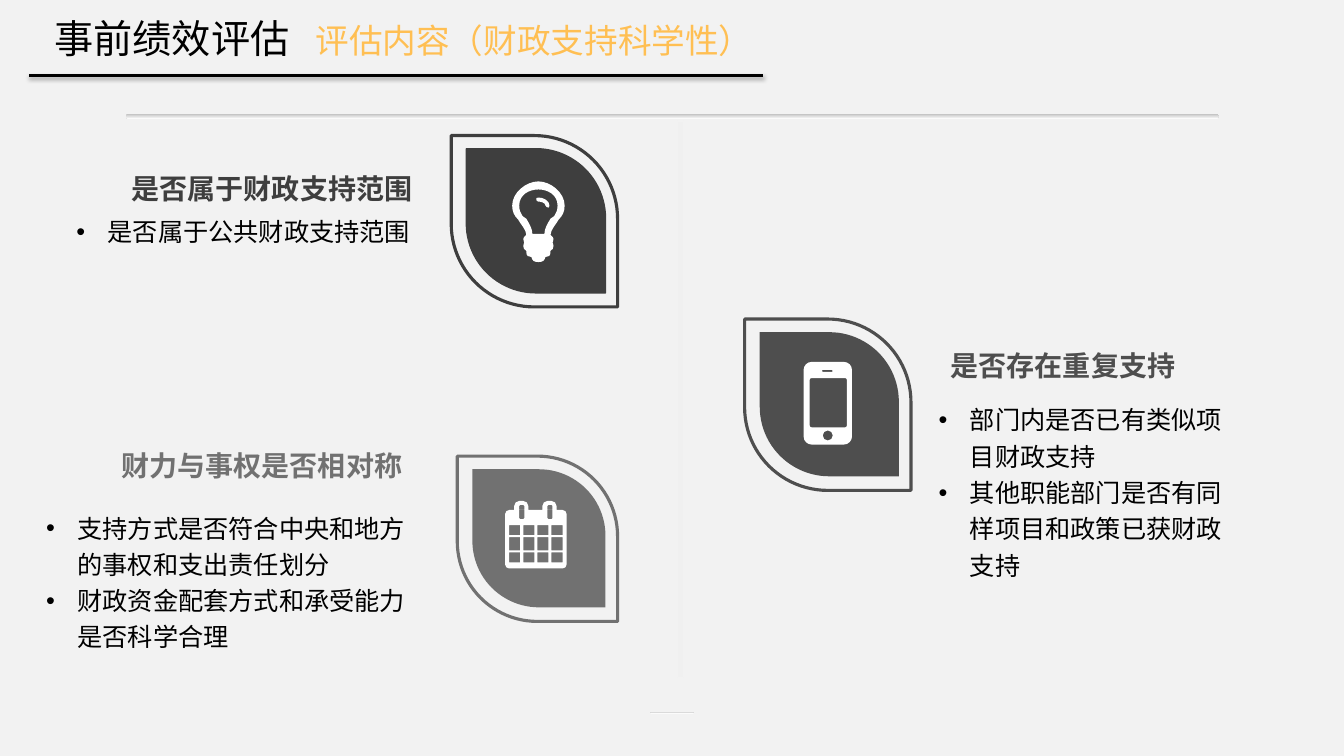
"""Build the slide on judging fiscal support before spending."""
from lxml import etree
from pptx import Presentation
from pptx.dml.color import RGBColor
from pptx.enum.shapes import MSO_CONNECTOR, MSO_SHAPE
from pptx.enum.text import MSO_ANCHOR, PP_ALIGN
from pptx.oxml import parse_xml
from pptx.oxml.ns import qn
from pptx.util import Emu, Pt

PX = 9144
NS = "http://schemas.openxmlformats.org/drawingml/2006/main"
LEAF, PILL, RECT = MSO_SHAPE.ROUND_2_DIAG_RECTANGLE, MSO_SHAPE.ROUNDED_RECTANGLE, MSO_SHAPE.RECTANGLE
TOP, MIDDLE, BOTTOM = MSO_ANCHOR.TOP, MSO_ANCHOR.MIDDLE, MSO_ANCHOR.BOTTOM
LEFT, RIGHT = PP_ALIGN.LEFT, PP_ALIGN.RIGHT
BLACK, WHITE, PAPER, AMBER = "000000", "FFFFFF", "F2F2F2", "FFBF53"
BODY_FONT, TITLE_FONT = "Calibri", "Noto Sans CJK SC"

TITLE = [("事前绩效评估\t", 28, BLACK), ("评估内容（财政支持科学性）", 24, AMBER)]
TITLE_BOX, TITLE_TAB = (54, 14, 740, 60), 259
RULES = [(125, 113, 1084, 5), (645, 706, 43, 2)]
DIVIDER = (672, 120, 6, 552)
UNDERLINE = (29, 75, 757, 75)
LEAF_INSET, LEAF_SHRINK = (15, 13), 27

TOPICS = [
    {"color": "3E3E3E", "inner_line": "3E3E3E", "leaf": (445, 137, 170, 165), "icon": "bulb",
     "heading": "是否属于财政支持范围", "heading_box": (118, 158, 330, 45),
     "heading_style": (BOTTOM, RIGHT, (0, 0, 39, 0)),
     "points": ["是否属于公共财政支持范围"], "points_box": (66, 204, 382, 76),
     "points_style": (TOP, LEFT, (10, 5, 39, 5))},
    {"color": "4E4E4E", "inner_line": None, "leaf": (736, 319, 170, 165), "icon": "phone",
     "heading": "是否存在重复支持", "heading_box": (904, 340, 300, 45),
     "heading_style": (MIDDLE, LEFT, (39, 0, 24, 0)),
     "points": ["部门内是否已有类似项目财政支持", "其他职能部门是否有同样项目和政策已获财政支持"],
     "points_box": (892, 381, 357, 209),
     "points_style": (MIDDLE, LEFT, (39, 5, 24, 5))},
    {"color": "717171", "inner_line": None, "leaf": (451, 455, 164, 159), "icon": "calendar",
     "heading": "财力与事权是否相对称", "heading_box": (108, 433, 330, 45),
     "heading_style": (BOTTOM, RIGHT, (0, 0, 39, 0)),
     "points": ["支持方式是否符合中央和地方的事权和支出责任划分", "财政资金配套方式和承受能力是否科学合理"],
     "points_box": (36, 498, 412, 76),
     "points_style": (TOP, LEFT, (10, 5, 39, 5))},
]

BULB_AXIS = 534
BULB_HALVES = [
    [(534, 180), (546, 180), (560, 191), (560, 204), (560, 210), (558, 214), (554, 218),
     (552, 222), (546, 228), (546, 233), (548, 235), (549, 236), (549, 237),
     (549, 239), (548, 240), (548, 241), (548, 241), (549, 242), (549, 244),
     (549, 246), (548, 248), (546, 249), (546, 249), (546, 250), (546, 250),
     (546, 254), (544, 255), (541, 255), (540, 259), (538, 260), (534, 260)],
    [(534, 188), (543, 188), (553, 193), (553, 204), (553, 208), (552, 211), (550, 214),
     (550, 215), (548, 215), (546, 217), (543, 222), (540, 227), (540, 232),
     (540, 232), (534, 232), (534, 232)],
]
BULB_GLINT = [(544, 206), (543, 206), (541, 205), (541, 204), (541, 201), (536, 200), (534, 200),
              (532, 200), (532, 199), (532, 197), (532, 197), (532, 196), (534, 196),
              (539, 196), (545, 199), (545, 204), (545, 205), (544, 206), (544, 206)]
PHONE_PARTS = [(797, 359, 845, 441, 8, 8), (803, 375, 840, 424, 2, 2),
               (815, 367, 826, 369, 1, 1), (816, 427, 826, 437, 5, 5)]
CALENDAR_PARTS = [(501, 506, 562, 564, 4, 4)]
CALENDAR_PARTS += [(x, 497, x + 14, 506, 5, 0) for x in (510, 538)]
CALENDAR_PARTS += [(x, 501, x + 5, 515, 1, 1) for x in (515, 543)]
CALENDAR_PARTS += [(505 + 14 * column, top, 516 + 14 * column, bottom, 0, 0)
                   for top, bottom in ((521, 531), (533, 546), (548, 558)) for column in range(4)]


def px(*values):
    return [Emu(round(value * PX)) for value in values]


def rgb(value):
    return RGBColor.from_string(value)


def rounded(left, top, right, bottom, top_radius, bottom_radius):
    """Outline a rectangle as a start point and cubic curve triples."""
    outline = []
    corners = [(left, top, 1, 1, top_radius), (right, top, -1, 1, top_radius),
               (right, bottom, -1, -1, bottom_radius), (left, bottom, 1, -1, bottom_radius)]
    for x, y, dx, dy, radius in corners:
        pull = 0.45 * radius
        arc = [(x, y + dy * radius), (x, y + dy * pull), (x + dx * pull, y), (x + dx * radius, y)]
        if dx != dy:
            arc.reverse()
        if not radius:
            arc = [(x, y)]
        edge = [outline[-1], arc[0]] if outline else []
        outline += edge + arc
    return outline


def mirrored(half):
    return half + [(2 * BULB_AXIS - x, y) for x, y in reversed(half[:-1])]


def add_shape(page, kind, box, fill=None, line=None, width=1):
    shape = page.shapes.add_shape(kind, *px(*box))
    shape.shadow.inherit = False
    if fill:
        shape.fill.solid()
        shape.fill.fore_color.rgb = rgb(fill)
    else:
        shape.fill.background()
    if line:
        shape.line.color.rgb = rgb(line)
        shape.line.width = Pt(width)
    else:
        shape.line.fill.background()
    return shape


def add_rule(page, box):
    rule = add_shape(page, PILL, box)
    rule.adjustments[0] = 0.5
    rule.fill.gradient()
    rule.fill.gradient_angle = 270
    for stop, color, position in zip(rule.fill.gradient_stops, ("BFBFBF", WHITE), (0, 1)):
        stop.color.rgb = rgb(color)
        stop.position = position


def add_leaf(page, box, **look):
    leaf = add_shape(page, LEAF, box, **look)
    leaf.rotation = 270
    leaf.adjustments[0], leaf.adjustments[1] = 0.5, 0


def add_icon(page, outlines):
    """Draw closed outlines as one shape, each three points after the start making a curve."""
    builder = None
    for outline in outlines:
        start, *rest = [px(*point) for point in outline]
        if builder is None:
            builder = page.shapes.build_freeform(*start, scale=1.0)
        else:
            builder.move_to(*start)
        builder.add_line_segments(rest, close=True)
    icon = builder.convert_to_shape()
    steps = list(icon._element.iter(qn("a:lnTo")))
    for first, second, third in zip(steps[::3], steps[1::3], steps[2::3]):
        curve = etree.Element(qn("a:cubicBezTo"))
        first.addprevious(curve)
        for step in (first, second, third):
            curve.append(step[0])
            step.getparent().remove(step)
    icon.shadow.inherit = False
    icon.fill.solid()
    icon.fill.fore_color.rgb = rgb(WHITE)
    icon.line.fill.background()


def style(span, size, color, font=BODY_FONT, bold=False):
    span.font.size, span.font.bold, span.font.name = Pt(size), bold, font
    span.font.color.rgb = rgb(color)
    etree.SubElement(span.font._element, qn("a:ea")).set("typeface", font)


def add_text(page, box, lines, anchor, align, insets, size, color, bullets=False):
    frame = page.shapes.add_textbox(*px(*box)).text_frame
    frame.word_wrap = True
    frame.vertical_anchor = anchor
    frame.margin_left, frame.margin_top, frame.margin_right, frame.margin_bottom = px(*insets)
    frame.text = "\n".join(lines)
    for para in frame.paragraphs:
        para.alignment = align
        style(para.runs[0], size, color, bold=not bullets)
        if bullets:
            para.line_spacing = 1.2
            props = para._p.get_or_add_pPr()
            props.set("marL", str(31 * PX))
            props.set("indent", str(-31 * PX))
            etree.SubElement(props, qn("a:buFont")).set("typeface", "Arial")
            etree.SubElement(props, qn("a:buChar")).set("char", "•")


def add_title(page):
    frame = page.shapes.add_textbox(*px(*TITLE_BOX)).text_frame
    frame.word_wrap = True
    frame.margin_left = frame.margin_top = frame.margin_right = frame.margin_bottom = 0
    para = frame.paragraphs[0]
    tabs = etree.SubElement(para._p.get_or_add_pPr(), qn("a:tabLst"))
    etree.SubElement(tabs, qn("a:tab"), pos=str(TITLE_TAB * PX), algn="l")
    for words, size, color in TITLE:
        span = para.add_run()
        span.text = words
        style(span, size, color, TITLE_FONT)
    line = page.shapes.add_connector(MSO_CONNECTOR.STRAIGHT, *px(*UNDERLINE))
    line.line.color.rgb = rgb(BLACK)
    line.line.width = Pt(2)
    line._element.spPr.append(parse_xml(
        f'<a:effectLst xmlns:a="{NS}"><a:outerShdw blurRad="40000" dist="20000" dir="5400000">'
        f'<a:srgbClr val="{BLACK}"><a:alpha val="38000"/></a:srgbClr></a:outerShdw></a:effectLst>'))


def main():
    icons = {"bulb": [mirrored(half) for half in BULB_HALVES] + [BULB_GLINT],
             "phone": [rounded(*part) for part in PHONE_PARTS],
             "calendar": [rounded(*part) for part in CALENDAR_PARTS]}
    deck = Presentation()
    deck.slide_width, deck.slide_height = px(1333, 750)
    page = deck.slides.add_slide(deck.slide_layouts[6])
    page.background.fill.solid()
    page.background.fill.fore_color.rgb = rgb(PAPER)
    for box in RULES:
        add_rule(page, box)
    add_shape(page, RECT, DIVIDER, fill="F0F0F0", line=PAPER)
    for topic in TOPICS:
        color, (x, y, width, height) = topic["color"], topic["leaf"]
        inner = (x + LEAF_INSET[0], y + LEAF_INSET[1], width - LEAF_SHRINK, height - LEAF_SHRINK)
        add_leaf(page, topic["leaf"], line=color, width=2.25)
        add_leaf(page, inner, fill=color, line=topic["inner_line"])
        add_icon(page, icons[topic["icon"]])
        add_text(page, topic["points_box"], topic["points"], *topic["points_style"], 18, BLACK, bullets=True)
        add_text(page, topic["heading_box"], [topic["heading"]], *topic["heading_style"], 20, color)
    add_title(page)
    deck.save("out.pptx")


if __name__ == "__main__":
    main()
